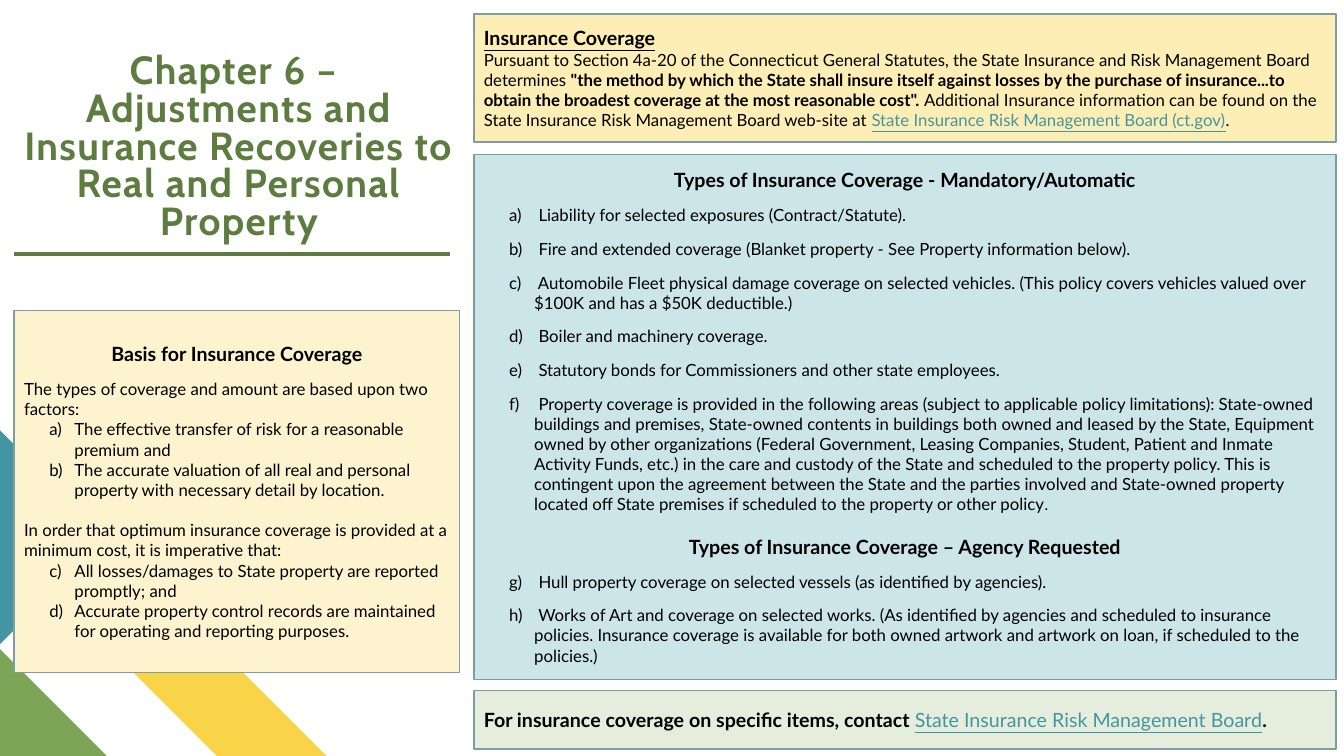
from pptx import Presentation
from pptx.dml.color import RGBColor
from pptx.enum.shapes import MSO_CONNECTOR, MSO_SHAPE
from pptx.enum.text import MSO_ANCHOR, PP_ALIGN
from pptx.util import Inches, Pt
from lxml.etree import SubElement
from pptx.oxml.ns import qn

THEME = {
    "white": "FFFFFF", "text": "000000", "link": "4495A2", "title": "5D7D40",
    "border": "7D9DA2", "yellow": "F9D448", "green": "7CA655", "teal": "4495A2",
    "pale_teal": "CBE5E9", "pale_gold": "FDEEB5", "pale_green": "E5EDDD",
    "cream": "FDF3CE", "title_font": "Cabin", "font": "Lato", "title_size": 28,
    # style: size, bold, underline, colour
    "styles": {
        "heading": (14, True, False, "text"),
        "underlined": (14, True, True, "text"),
        "body": (12, False, False, "text"),
        "bold": (12, True, False, "text"),
        "small": (11, False, False, "text"),
        "link": (12, False, True, "link"),
        "large link": (14, False, True, "link"),
    },
}

TITLE = ("Chapter 6 – \vAdjustments and Insurance Recoveries to "
         "Real and Personal Property")

DECOR = [
    ("yellow", [(3.24, 7.5), (2.15, 7.5), (1.06, 6.41), (1.61, 5.87)]),
    ("green", [(1.06, 7.5), (0, 7.5), (0, 6.44)]),
    ("teal", [(0, 4.27), (1.06, 5.33), (0, 6.39)]),
]

SMALL_GAP, LARGE_GAP = 9.6, 14.4


def heading(text, gap=0):
    return {"spans": [(text, "heading")], "gap": gap, "align": PP_ALIGN.CENTER}


def body(*spans, gap=0):
    return {"spans": spans, "gap": gap, "align": PP_ALIGN.LEFT}


def lettered(texts, start, gap=0):
    """Items lettered a), b), ... from the given position in the alphabet."""
    return [{"spans": [(text, "body")], "gap": gap, "align": PP_ALIGN.LEFT,
             "start": start} for text in texts]


MANDATORY = lettered([
    " Liability for selected exposures (Contract/Statute).",
    " Fire and extended coverage (Blanket property - See Property information below).",
    " Automobile Fleet physical damage coverage on selected vehicles. (This policy "
    "covers vehicles valued over $100K and has a $50K deductible.)",
    " Boiler and machinery coverage.",
    " Statutory bonds for Commissioners and other state employees.",
    " Property coverage is provided in the following areas (subject to applicable "
    "policy limitations): State-owned buildings and premises, State-owned contents in "
    "buildings both owned and leased by the State, Equipment owned by other "
    "organizations (Federal Government, Leasing Companies, Student, Patient and Inmate "
    "Activity Funds, etc.) in the care and custody of the State and scheduled to the "
    "property policy. This is contingent upon the agreement between the State and the "
    "parties involved and State-owned property located off State premises if scheduled "
    "to the property or other policy",
], 1, SMALL_GAP)
MANDATORY[-1]["spans"].append((".", "small"))

REQUESTED = lettered([
    " Hull property coverage on selected vessels (as identified by agencies).",
    " Works of Art and coverage on selected works. (As identified by agencies and "
    "scheduled to insurance policies. Insurance coverage is available for both owned "
    "artwork and artwork on loan, if scheduled to the policies.)",
], 7, SMALL_GAP)

# fill, (left, top, width, height), paragraphs
PANELS = [
    ("pale_teal", (4.7, 1.53, 8.55, 5.21), [
        heading("Types of Insurance Coverage - Mandatory/Automatic"),
        *MANDATORY,
        heading("Types of Insurance Coverage – Agency Requested", LARGE_GAP),
        *REQUESTED,
    ]),
    ("pale_gold", (4.7, 0.14, 8.55, 1.27), [
        body(("Insurance Coverage", "underlined")),
        body(
            ("Pursuant to Section 4a-20 of the Connecticut General Statutes, the State "
             "Insurance and Risk Management Board determines ", "body"),
            ('"the method by which the State shall insure itself against losses by the '
             'purchase of insurance...to obtain the broadest coverage at the most '
             'reasonable cost". ', "bold"),
            ("Additional Insurance information can be found on the State Insurance Risk "
             "Management Board web-site at ", "body"),
            ("State Insurance Risk Management Board (ct.gov)", "link"),
            (".", "body")),
    ]),
    ("pale_green", (4.7, 6.85, 8.55, 0.58), [
        body(("For insurance coverage on specific items, contact ", "heading"),
             ("State Insurance Risk Management Board", "large link"),
             (".", "heading")),
    ]),
    ("cream", (0.14, 3.08, 4.42, 3.59), [
        heading("Basis for Insurance Coverage"),
        body(("The types of coverage and amount are based upon two factors:", "body"),
             gap=SMALL_GAP),
        *lettered([
            "The effective transfer of risk for a reasonable premium and",
            "The accurate valuation of all real and personal property with necessary "
            "detail by location.",
        ], 1),
        body(("In order that optimum insurance coverage is provided at a minimum cost, "
              "it is imperative that:", "body"), gap=LARGE_GAP),
        *lettered([
            "All losses/damages to State property are reported promptly; and",
            "Accurate property control records are maintained for operating and "
            "reporting purposes.",
        ], 3),
    ]),
]


def color(name):
    return RGBColor.from_string(THEME[name])


def paint(shape, fill):
    shape.shadow.inherit = False
    shape.fill.solid()
    shape.fill.fore_color.rgb = color(fill)
    shape.line.fill.background()


def add_decor(page, fill, points):
    corners = [(Inches(x), Inches(y)) for x, y in points]
    builder = page.shapes.build_freeform(*corners[0], scale=1.0)
    builder.add_line_segments(corners[1:], close=True)
    paint(builder.convert_to_shape(), fill)


def add_title(page):
    box = page.shapes.add_textbox(*map(Inches, (0.16, 0.08, 4.42, 2.33)))
    box.fill.solid()
    box.fill.fore_color.rgb = color("white")
    frame = box.text_frame
    frame.word_wrap = True
    frame.vertical_anchor = MSO_ANCHOR.BOTTOM
    frame.margin_left = frame.margin_right = frame.margin_top = frame.margin_bottom = 0
    para = frame.paragraphs[0]
    para.text = TITLE
    para.alignment = PP_ALIGN.CENTER
    para.line_spacing = 0.8
    for span in para.runs:
        span.font.name, span.font.size = THEME["title_font"], Pt(THEME["title_size"])
        span.font.bold = True
        span.font.color.rgb = color("title")
        span.font._element.set("spc", "100")


def set_lettering(para, start):
    properties = para._p.get_or_add_pPr()
    properties.set("marL", str(Inches(0.5)))
    properties.set("indent", str(Inches(-0.25)))
    SubElement(properties, qn("a:buFont"), typeface="+mj-lt")
    SubElement(properties, qn("a:buAutoNum"), type="alphaLcParenR", startAt=str(start))


def fill_paragraph(para, content):
    para.alignment = content["align"]
    para.space_before = Pt(content["gap"])
    if "start" in content:
        set_lettering(para, content["start"])
    for text, style in content["spans"]:
        size, bold, underline, ink = THEME["styles"][style]
        span = para.add_run()
        span.text = text
        span.font.name, span.font.size = THEME["font"], Pt(size)
        span.font.bold, span.font.underline = bold, underline
        span.font.color.rgb = color(ink)


def add_panel(page, fill, place, contents):
    box = page.shapes.add_shape(MSO_SHAPE.RECTANGLE, *map(Inches, place))
    paint(box, fill)
    box.line.color.rgb = color("border")
    box.line.width = Pt(1)
    frame = box.text_frame
    frame.word_wrap = True
    frame.vertical_anchor = MSO_ANCHOR.MIDDLE
    for index, content in enumerate(contents):
        para = frame.add_paragraph() if index else frame.paragraphs[0]
        fill_paragraph(para, content)


def add_title_rule(page):
    rule = page.shapes.add_connector(
        MSO_CONNECTOR.STRAIGHT, *map(Inches, (0.14, 2.52, 4.46, 2.52)))
    rule.line.color.rgb = color("title")
    rule.line.width = Pt(3)
    SubElement(rule._element.spPr, qn("a:effectLst"))


def main():
    deck = Presentation()
    deck.slide_width, deck.slide_height = Inches(13.33), Inches(7.5)
    page = deck.slides.add_slide(deck.slide_layouts[6])
    add_title(page)
    for fill, points in DECOR:
        add_decor(page, fill, points)
    for fill, place, contents in PANELS:
        add_panel(page, fill, place, contents)
    add_title_rule(page)
    deck.save("out.pptx")


if __name__ == "__main__":
    main()
